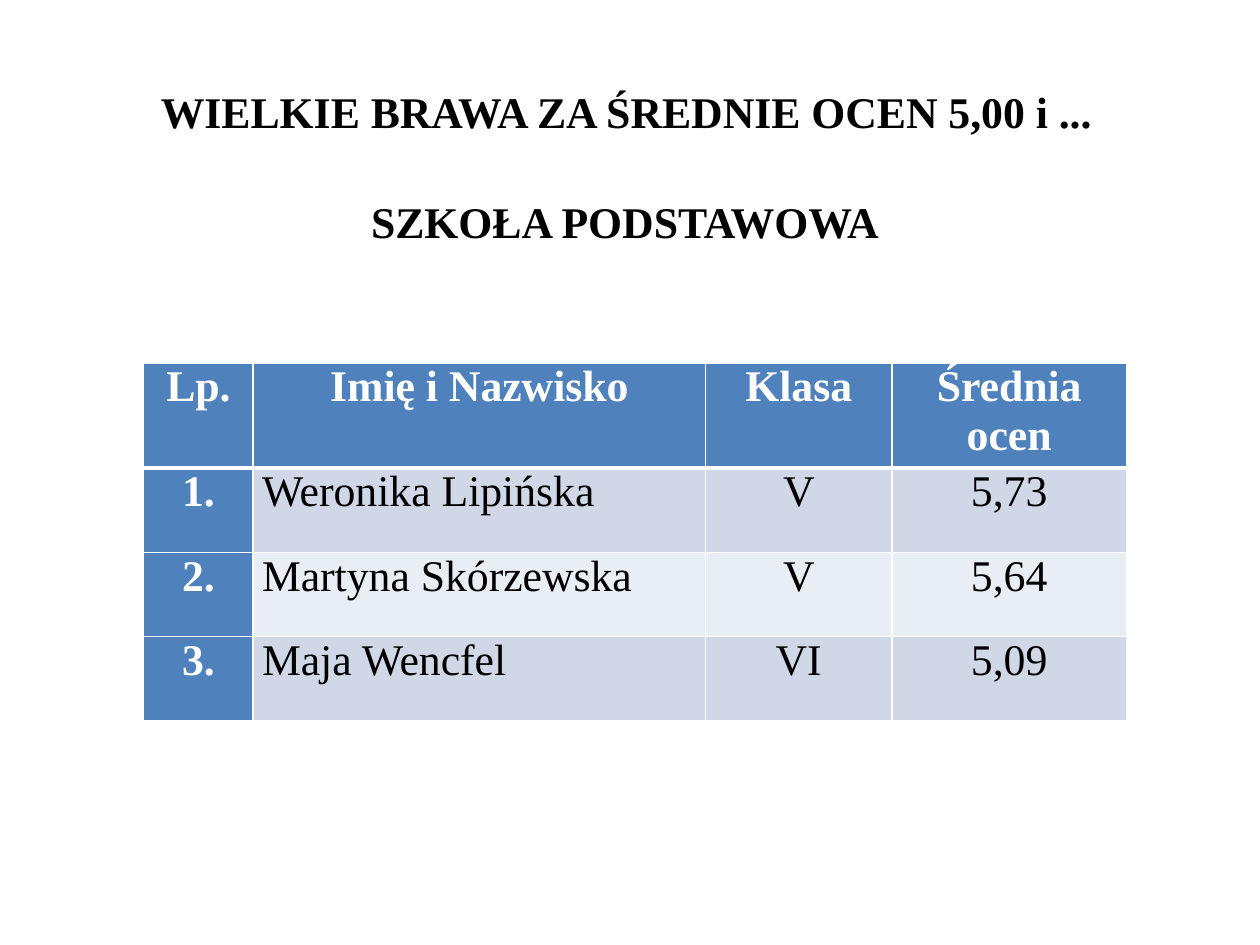
from dataclasses import dataclass

from lxml.etree import SubElement
from pptx import Presentation
from pptx.dml.color import RGBColor
from pptx.enum.text import MSO_ANCHOR, PP_ALIGN
from pptx.oxml.ns import qn
from pptx.util import Inches, Pt

COLORS = {
    "black": "000000",
    "white": "FFFFFF",
    "blue": "4F81BD",
    "dark_band": "D0D8E8",
    "light_band": "E9EDF4",
}
HEADERS = ("Lp.", "Imię i Nazwisko", "Klasa", "Średnia ocen")
COLUMN_WIDTHS = (0.87, 3.59, 1.48, 1.86)
HEADER_HEIGHT, ROW_HEIGHT = 0.83, 0.67
NAME_COLUMN = 1


@dataclass
class Pupil:
    name: str
    grade: str
    average: str


PUPILS = (
    Pupil("Weronika Lipińska", "V", "5,73"),
    Pupil("Martyna Skórzewska", "V", "5,64"),
    Pupil("Maja Wencfel", "VI", "5,09"),
)


def write(frame, text: str, color: str = "black", bold: bool = True,
          align: PP_ALIGN = PP_ALIGN.CENTER) -> None:
    frame.text = text
    paragraph = frame.paragraphs[0]
    paragraph.alignment = align
    paragraph.font.name = "Times New Roman"
    paragraph.font.size = Pt(25)
    paragraph.font.bold = bold
    paragraph.font.color.rgb = RGBColor.from_string(COLORS[color])


def add_borders(cell, top: float, bottom: float) -> None:
    properties = cell._tc.get_or_add_tcPr()
    for side, width in (("L", 1), ("R", 1), ("T", top), ("B", bottom)):
        line = SubElement(properties, qn(f"a:ln{side}"), w=str(Pt(width)))
        fill = SubElement(line, qn("a:solidFill"))
        SubElement(fill, qn("a:srgbClr"), val=COLORS["white"])


def style_cell(cell, row: int, column: int, text: str) -> None:
    heading = row == 0 or column == 0
    band = "dark_band" if row % 2 else "light_band"
    left = column == NAME_COLUMN and not heading
    write(cell.text_frame, text, "white" if heading else "black", heading,
          PP_ALIGN.LEFT if left else PP_ALIGN.CENTER)
    cell.margin_left = cell.margin_right = Inches(0.07)
    cell.margin_top = cell.margin_bottom = 0
    # A thick rule parts the header from the pupils
    add_borders(cell, top=3 if row == 1 else 1, bottom=3 if row == 0 else 1)
    cell.fill.solid()
    cell.fill.fore_color.rgb = RGBColor.from_string(COLORS["blue" if heading else band])


def add_results(page) -> None:
    rows = [HEADERS] + [(f"{number}.", pupil.name, pupil.grade, pupil.average)
                        for number, pupil in enumerate(PUPILS, 1)]
    heights = [HEADER_HEIGHT] + [ROW_HEIGHT] * len(PUPILS)
    table = page.shapes.add_table(
        len(rows), len(HEADERS), Inches(1.14), Inches(2.88),
        Inches(sum(COLUMN_WIDTHS)), Inches(sum(heights))).table
    table.first_col = True
    for column, width in zip(table.columns, COLUMN_WIDTHS):
        column.width = Inches(width)
    for row, (height, texts) in enumerate(zip(heights, rows)):
        table.rows[row].height = Inches(height)
        for column, text in enumerate(texts):
            style_cell(table.cell(row, column), row, column, text)


def main() -> None:
    deck = Presentation()
    deck.slide_width, deck.slide_height = Inches(10), Inches(7.5)
    page = deck.slides.add_slide(deck.slide_layouts[5])

    # Title
    title = page.shapes.title
    title.left, title.top = Inches(1.14), Inches(0.18)
    title.width, title.height = Inches(7.66), Inches(1.73)
    frame = title.text_frame
    frame.word_wrap = False
    frame.vertical_anchor = MSO_ANCHOR.MIDDLE
    frame.margin_bottom = Inches(0.38)
    write(frame, "WIELKIE BRAWA ZA ŚREDNIE OCEN 5,00 i ...")

    # School name
    box = page.shapes.add_textbox(Inches(2.56), Inches(1.5), Inches(4.8), Inches(0.52))
    box.text_frame.word_wrap = True
    write(box.text_frame, "SZKOŁA PODSTAWOWA")

    # Table of averages
    add_results(page)
    deck.save("out.pptx")


if __name__ == "__main__":
    main()
